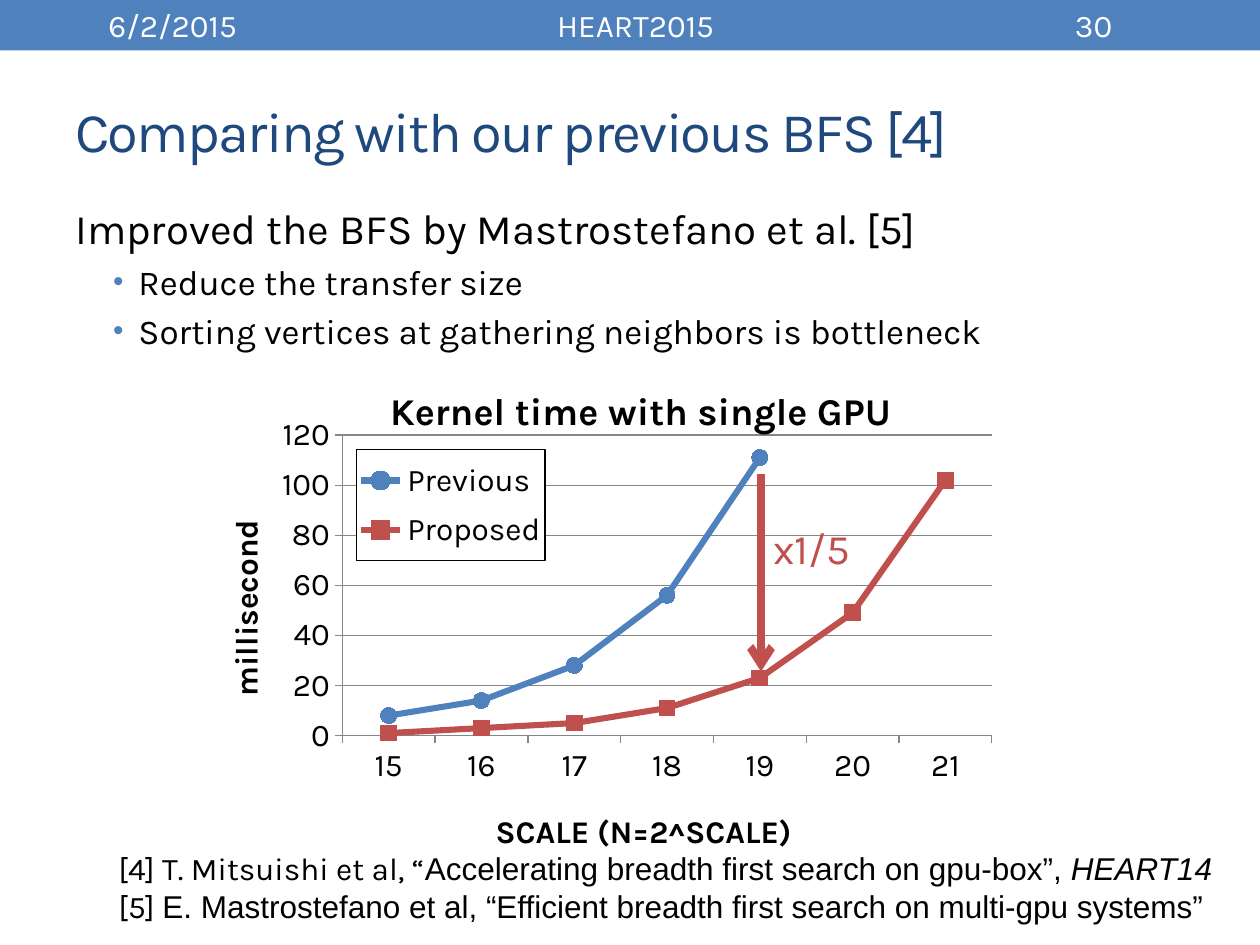
from lxml import etree
from pptx import Presentation
from pptx import util as u
from pptx.chart.data import CategoryChartData
from pptx.dml.color import RGBColor
from pptx.enum import chart as ch, shapes, text
from pptx.oxml import parse_xml
from pptx.oxml.ns import nsdecls, qn

COLORS = {key: RGBColor.from_string(value) for key, value in {
    "blue": "4F81BD", "navy": "1F497D", "red": "C0504D",
    "black": "000000", "white": "FFFFFF", "gray": "868686"}.items()}


def add_run(paragraph, words, size, color="black", face="Karla", bold=False, italic=False):
    run = paragraph.add_run()
    run.text = words
    font = run.font
    font.size, font.name, font.bold, font.italic = u.Pt(size), face, bold, italic
    font.color.rgb = COLORS[color]
    return run


def place(element, **fractions):
    """Give a chart part a manual layout in fractions of the chart."""
    for old in element.findall(qn("c:layout")):
        element.remove(old)
    layout = etree.Element(qn("c:layout"))
    manual = etree.SubElement(layout, qn("c:manualLayout"))
    if element.tag == qn("c:plotArea"):
        etree.SubElement(manual, qn("c:layoutTarget")).set("val", "inner")
    for side in "xy":
        etree.SubElement(manual, qn(f"c:{side}Mode")).set("val", "edge")
    for key, value in fractions.items():
        etree.SubElement(manual, qn(f"c:{key}")).set("val", str(value))
    overlay = element.find(qn("c:overlay"))
    if overlay is None:
        element.insert(0, layout)
    else:
        overlay.addprevious(layout)


prs = Presentation()
prs.slide_width, prs.slide_height = u.Inches(10), u.Inches(7.5)
slide = prs.slides.add_slide(prs.slide_layouts[6])

# Header band
band = slide.shapes.add_shape(shapes.MSO_SHAPE.RECTANGLE, 0, 0, u.Inches(10), u.Inches(0.4))
band.shadow.inherit = False
band.fill.solid()
band.fill.fore_color.rgb = COLORS["blue"]
band.line.fill.background()

for left, width, words in [(0.5, 1.74, "6/2/2015"), (2.33, 5.43, "HEART2015"), (7.86, 1.64, "30")]:
    header = slide.shapes.add_textbox(
        u.Inches(left), u.Inches(0.02), u.Inches(width), u.Inches(0.36)).text_frame
    header.word_wrap = True
    header.vertical_anchor = text.MSO_ANCHOR.MIDDLE
    header.paragraphs[0].alignment = text.PP_ALIGN.CENTER
    add_run(header.paragraphs[0], words, 18, "white")

# Title
title = slide.shapes.add_textbox(
    u.Inches(0.5), u.Inches(0.49), u.Inches(9), u.Inches(1.08)).text_frame
title.word_wrap = True
title.vertical_anchor = text.MSO_ANCHOR.MIDDLE
heading = add_run(title.paragraphs[0], "Comparing with our previous BFS [4]", 32, "navy")
heading.font._element.set("spc", "-100")

# Body with two bullets
body = slide.shapes.add_textbox(
    u.Inches(0.5), u.Inches(1.56), u.Inches(9), u.Inches(1.39)).text_frame
body.word_wrap = True
lead = body.paragraphs[0]
lead.space_before = u.Pt(4.8)
add_run(lead, "Improved the BFS by Mastrostefano et al. [5]", 24)
for words in ["Reduce the transfer size", "Sorting vertices at gathering neighbors is bottleneck"]:
    bullet = body.add_paragraph()
    bullet.space_before = u.Pt(4)
    add_run(bullet, words, 20)
    props = bullet._p.get_or_add_pPr()
    props.set("marL", str(u.Inches(0.5)))
    props.set("indent", str(u.Inches(-0.2)))
    color = etree.SubElement(props, qn("a:buClr"))
    etree.SubElement(color, qn("a:srgbClr")).set("val", str(COLORS["blue"]))
    etree.SubElement(props, qn("a:buSzPct")).set("val", "85000")
    etree.SubElement(props, qn("a:buFont")).set("typeface", "Arial")
    etree.SubElement(props, qn("a:buChar")).set("char", "•")

# Kernel time chart
data = CategoryChartData()
data.categories = [str(scale) for scale in range(15, 22)]
data.add_series("Previous", [8, 14, 28, 56, 111, None, None])
data.add_series("Proposed", [1, 3, 5, 11, 23, 49, 102])
chart = slide.shapes.add_chart(
    ch.XL_CHART_TYPE.LINE_MARKERS, u.Inches(1.61), u.Inches(2.72),
    u.Inches(6.51), u.Inches(4.12), data).chart
chart.font.size, chart.font.name = u.Pt(18), "Karla"
chart.font.color.rgb = COLORS["black"]
chart.plots[0].vary_by_categories = False
place(chart._chartSpace.chart.plotArea, x=0.17, y=0.178, w=0.792, h=0.579)

chart.has_title = True
scale_axis, time_axis = chart.category_axis, chart.value_axis
scale_axis.has_title = time_axis.has_title = True
for label, words, size, x, y in [
        (chart.chart_title, "Kernel time with single GPU", 21.6, 0.22, 0.07),
        (scale_axis.axis_title, "SCALE (N=2^SCALE)", 18, 0.35, 0.89),
        (time_axis.axis_title, "millisecond", 18, 0.02, 0.33)]:
    add_run(label.text_frame.paragraphs[0], words, size, bold=True)
    place(label._element, x=x, y=y)

time_axis.minimum_scale, time_axis.maximum_scale, time_axis.major_unit = 0, 120, 20
time_axis.has_major_gridlines = True
for line in (scale_axis.format.line, time_axis.format.line, time_axis.major_gridlines.format.line):
    line.color.rgb = COLORS["gray"]
    line.width = u.Pt(0.75)
for axis in (scale_axis, time_axis):
    axis.major_tick_mark = ch.XL_TICK_MARK.OUTSIDE

for series, color, style in zip(chart.plots[0].series, ("blue", "red"),
                                (ch.XL_MARKER_STYLE.CIRCLE, ch.XL_MARKER_STYLE.SQUARE)):
    series.smooth = False
    series.format.line.width = u.Pt(3.5)
    series.format.line.color.rgb = COLORS[color]
    series.marker.style, series.marker.size = style, 9
    series.marker.format.fill.solid()
    series.marker.format.fill.fore_color.rgb = COLORS[color]
    series.marker.format.line.color.rgb = COLORS[color]

# Boxed legend over the plot
chart.has_legend = True
legend = chart.legend
legend.position = ch.XL_LEGEND_POSITION.RIGHT
legend.include_in_layout = False
legend.font.size, legend.font.name = u.Pt(18), "Karla"
legend.font.color.rgb = COLORS["black"]
place(legend._element, x=0.187, y=0.206, w=0.23, h=0.214)
legend._element.find(qn("c:overlay")).addnext(parse_xml(
    f'<c:spPr {nsdecls("c", "a")}><a:solidFill><a:srgbClr val="{COLORS["white"]}"/></a:solidFill>'
    f'<a:ln w="9525"><a:solidFill><a:srgbClr val="{COLORS["black"]}"/></a:solidFill></a:ln></c:spPr>'))

# Speedup arrow and its label
speedup = slide.shapes.add_group_shape()
arrow = speedup.shapes.add_connector(
    shapes.MSO_CONNECTOR.STRAIGHT, u.Inches(6.04), u.Inches(3.76), u.Inches(6.04), u.Inches(5.33))
arrow.line.color.rgb = COLORS["red"]
arrow.line.width = u.Pt(4.5)
etree.SubElement(arrow.line._get_or_add_ln(), qn("a:tailEnd")).set("type", "arrow")
etree.SubElement(arrow._element.spPr, qn("a:effectLst"))
ratio = speedup.shapes.add_textbox(
    u.Inches(6.04), u.Inches(4.1), u.Inches(0.85), u.Inches(0.5)).text_frame
ratio.word_wrap = False
add_run(ratio.paragraphs[0], "x1/5", 24, "red")

# References
references = slide.shapes.add_textbox(
    u.Inches(0.84), u.Inches(6.69), u.Inches(8.91), u.Inches(0.71)).text_frame
references.word_wrap = False
own = references.paragraphs[0]
add_run(own, "[4] T. Mitsuishi et al, “", 18)
add_run(own, "Accelerating breadth first search on gpu-box”, ", 18, face="Arial")
add_run(own, "HEART14", 18, face="Arial", italic=True)
other = references.add_paragraph()
add_run(other, "[5] ", 18)
add_run(other, "E. Mastrostefano et al, “Efficient breadth first search on multi-gpu systems”",
        18, face="Arial")

prs.save("out.pptx")
